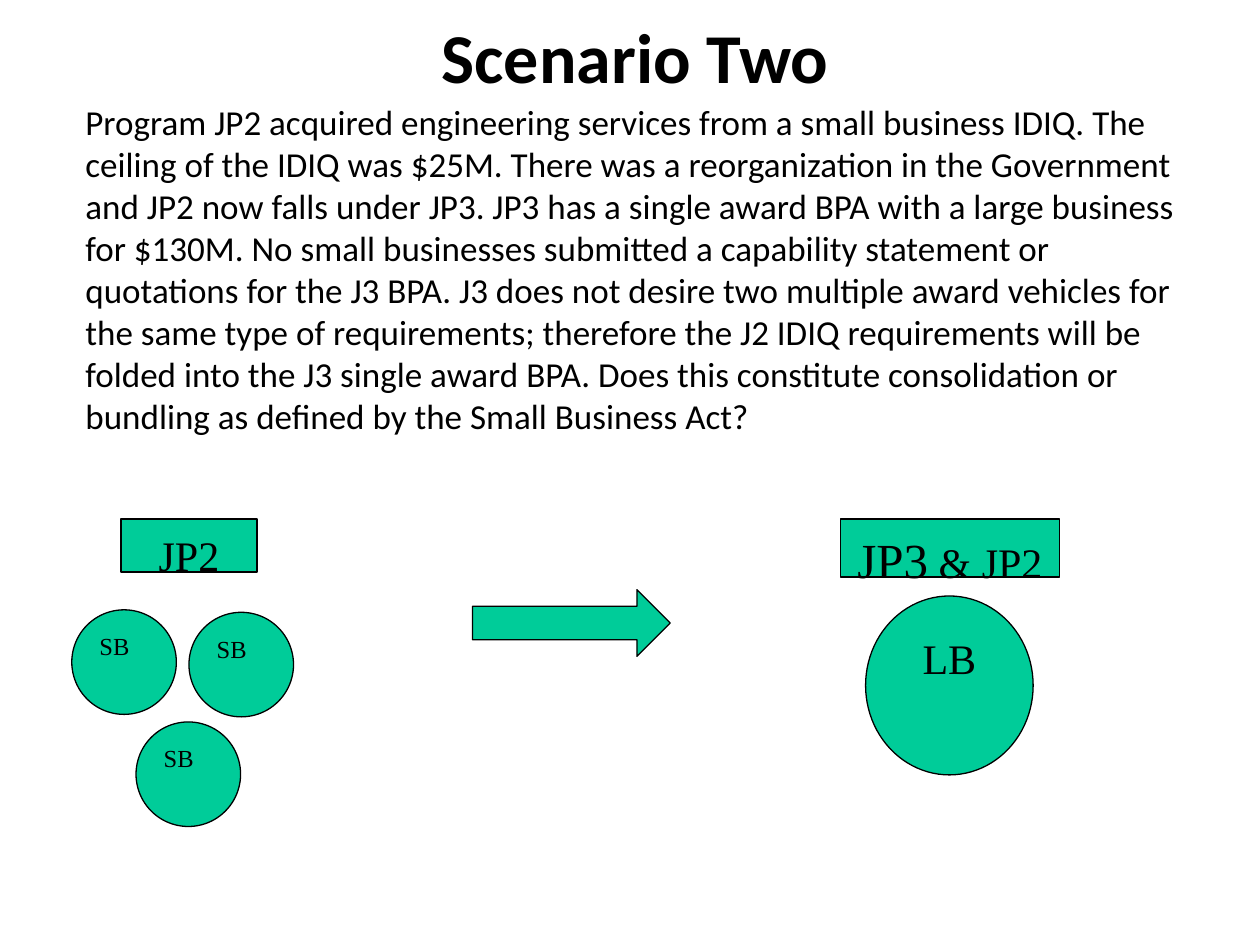
"""Build the Scenario Two slide about folding a small business IDIQ into a BPA."""
from dataclasses import dataclass

from pptx import Presentation
from pptx.dml.color import RGBColor
from pptx.enum.shapes import MSO_SHAPE as Shape
from pptx.enum.text import MSO_ANCHOR as Anchor, PP_ALIGN as Align
from pptx.util import Inches, Pt


@dataclass(frozen=True)
class Theme:
    ink: RGBColor = RGBColor(0x00, 0x00, 0x00)
    green: RGBColor = RGBColor(0x00, 0xCC, 0x99)
    text_font: str = "Calibri"
    diagram_font: str = "Times New Roman"
    title: int = 40
    lead: int = 28
    label: int = 24
    body: int = 20
    small: int = 14
    outline: float = 0.75


theme = Theme()


def write(shape, runs, font, align, anchor=Anchor.TOP, bold=False):
    frame = shape.text_frame
    frame.word_wrap = True
    frame.vertical_anchor = anchor
    paragraph = frame.paragraphs[0]
    paragraph.alignment = align
    for text, size in runs:
        run = paragraph.add_run()
        run.text = text
        run.font.name = font
        run.font.size = Pt(size)
        run.font.bold = bold
        run.font.color.rgb = theme.ink


def add_green(kind, left, top, width, height):
    shape = slide.shapes.add_shape(
        kind, Inches(left), Inches(top), Inches(width), Inches(height)
    )
    shape.shadow.inherit = False
    shape.fill.solid()
    shape.fill.fore_color.rgb = theme.green
    shape.line.color.rgb = theme.ink
    shape.line.width = Pt(theme.outline)
    return shape


presentation = Presentation()
presentation.slide_width = Inches(10)
presentation.slide_height = Inches(7.5)
slide = presentation.slides.add_slide(presentation.slide_layouts[6])

title = slide.shapes.add_textbox(Inches(0.54), Inches(0.13), Inches(9), Inches(0.62))
write(title, [("Scenario Two", theme.title)], theme.text_font, Align.CENTER, Anchor.MIDDLE, True)

story = (
    "Program JP2 acquired engineering services from a small business IDIQ. "
    "The ceiling of the IDIQ was $25M. There was a reorganization in the Government "
    "and JP2 now falls under JP3. JP3 has a single award BPA with a large business "
    "for $130M. No small businesses submitted a capability statement or quotations "
    "for the J3 BPA. J3 does not desire two multiple award vehicles for the same type "
    "of requirements; therefore the J2 IDIQ requirements will be folded into the J3 "
    "single award BPA. Does this constitute consolidation or bundling as defined by "
    "the Small Business Act?"
)
body = slide.shapes.add_textbox(Inches(0.58), Inches(0.75), Inches(9), Inches(3.13))
write(body, [(story, theme.body)], theme.text_font, Align.LEFT)

labelled_shapes = [
    (Shape.RECTANGLE, 0.96, 4.12, 1.08, 0.42, [("JP2", theme.label)]),
    (Shape.RECTANGLE, 6.67, 4.12, 1.74, 0.46, [("JP3", theme.lead), (" & JP2", theme.label)]),
    (Shape.OVAL, 6.87, 4.73, 1.33, 1.42, [("LB", theme.label)]),
]
for kind, left, top, width, height, runs in labelled_shapes:
    shape = add_green(kind, left, top, width, height)
    shape.text_frame.margin_top = Inches(0.08)
    write(shape, runs, theme.diagram_font, Align.CENTER)

for left, top in [(0.57, 4.84), (1.5, 4.86), (1.08, 5.73)]:
    small_business = add_green(Shape.OVAL, left, top, 0.83, 0.83)
    write(small_business, [("SB", theme.small)], theme.diagram_font, Align.LEFT)

add_green(Shape.RIGHT_ARROW, 3.75, 4.68, 1.57, 0.53)

presentation.save("out.pptx")
